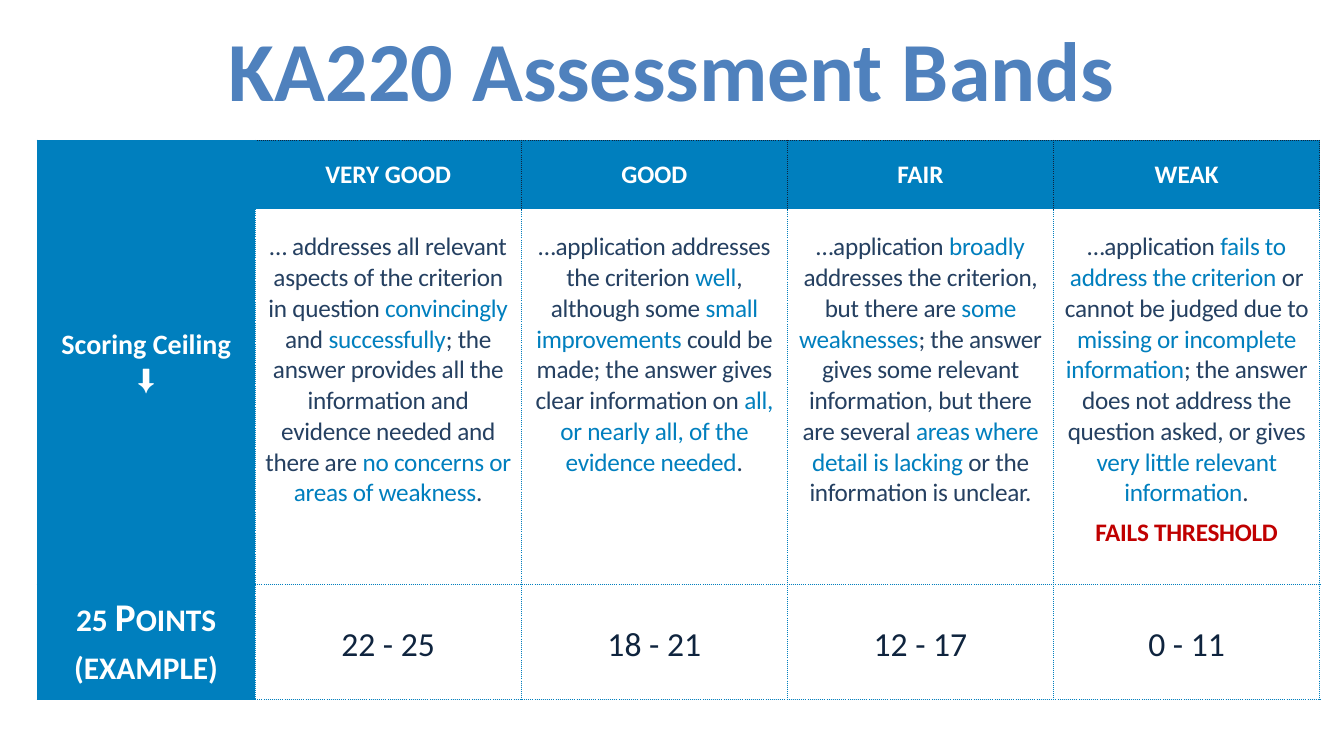
from dataclasses import dataclass

from lxml.etree import SubElement
from pptx import Presentation
from pptx.dml.color import RGBColor
from pptx.enum.text import MSO_ANCHOR, MSO_AUTO_SIZE, PP_ALIGN
from pptx.oxml.ns import qn
from pptx.table import _Cell
from pptx.text.text import _Paragraph
from pptx.util import Inches, Pt

COLORS = {
    "title": "4F81BD",
    "blue": "007FBE",
    "body": "254061",
    "navy": "0F243E",
    "alert": "C00000",
    "white": "FFFFFF",
}
FONT = "Calibri"
LABEL_COLUMN, BAND_COLUMN = 2.16, 2.64
ROWS = (0.68, 3.73, 1.14)


@dataclass(frozen=True)
class Band:
    name: str
    description: str  # phrases between asterisks are highlighted
    points: str
    warning: str = ""


@dataclass(frozen=True)
class Border:
    color: str = "blue"
    width: float = 1


BANDS = (
    Band("VERY GOOD",
         "… addresses all relevant aspects of the criterion in question *convincingly* and "
         "*successfully*; the answer provides all the information and evidence needed and "
         "there are *no concerns or areas of weakness*.", "22 - 25"),
    Band("GOOD",
         "…application addresses the criterion *well*, although some *small improvements *"
         "could be made; the answer gives clear information on "
         "*all, or nearly all, of the evidence needed*.", "18 - 21"),
    Band("FAIR",
         "…application *broadly* addresses the criterion, but there are *some weaknesses*; "
         "the answer gives some relevant information, but there are several "
         "*areas where detail is lacking *or the information is unclear.", "12 - 17"),
    Band("WEAK",
         "…application *fails to address the criterion *or cannot be judged due to "
         "*missing or incomplete information*; the answer does not address the question "
         "asked, or gives *very little relevant information*.", "0 - 11", "FAILS THRESHOLD"),
)
DOTTED = Border()
FINE = Border("navy", 0.5)


def rgb(color: str) -> RGBColor:
    return RGBColor.from_string(COLORS[color])


def format_paragraph(paragraph: _Paragraph, size: float, color: str, bold: bool = False,
                     spacing: float = 0) -> None:
    paragraph.alignment = PP_ALIGN.CENTER
    font = paragraph.font
    font.name, font.size, font.bold = FONT, Pt(size), bold
    font.color.rgb = rgb(color)
    if spacing:
        paragraph.space_before = paragraph.space_after = Pt(spacing)


def style_cell(cell: _Cell, fill: str, left: Border = DOTTED, right: Border = DOTTED,
               top: Border = DOTTED, bottom: Border = DOTTED) -> None:
    properties = cell._tc.get_or_add_tcPr()
    for side, border in zip("LRTB", (left, right, top, bottom)):
        edge = SubElement(properties, qn(f"a:ln{side}"), w=str(Pt(border.width)))
        paint = SubElement(edge, qn("a:solidFill"))
        SubElement(paint, qn("a:srgbClr"), val=COLORS[border.color])
        SubElement(edge, qn("a:prstDash"), val="sysDot")
    cell.fill.solid()
    cell.fill.fore_color.rgb = rgb(fill)
    cell.vertical_anchor = MSO_ANCHOR.MIDDLE


def set_narrow_margins(cell: _Cell, top: float = 0) -> None:
    cell.margin_left = cell.margin_right = Inches(0.07)
    cell.margin_top, cell.margin_bottom = Inches(top), 0


def write_description(cell: _Cell, band: Band) -> None:
    set_narrow_margins(cell, top=0.23)
    cell.vertical_anchor = MSO_ANCHOR.TOP
    description = cell.text_frame.paragraphs[0]
    format_paragraph(description, 18, "body", spacing=3)
    for index, phrase in enumerate(band.description.split("*")):
        run = description.add_run()
        run.text = phrase
        if index % 2:
            run.font.color.rgb = rgb("blue")
    if band.warning:
        warning = cell.text_frame.add_paragraph()
        warning.text = band.warning
        format_paragraph(warning, 18, "alert", bold=True, spacing=3)
    for paragraph in cell.text_frame.paragraphs:
        for run in paragraph.runs:
            run.font._element.set("spc", "-20")


def write_labels(ceiling: _Cell, points: _Cell) -> None:
    ceiling.text = "Scoring Ceiling\n⬇"
    for paragraph in ceiling.text_frame.paragraphs:
        format_paragraph(paragraph, 20, "white", bold=True)
    points.text = "25 Points\v(example)"
    example = points.text_frame.paragraphs[0]
    format_paragraph(example, 28, "white", bold=True)
    for run in example.runs:
        run.font._element.set("cap", "small")


def main() -> None:
    deck = Presentation()
    deck.slide_width, deck.slide_height = Inches(13.33), Inches(7.5)
    slide = deck.slides.add_slide(deck.slide_layouts[5])

    title = slide.shapes.title
    title.left, title.top = 0, Inches(0.36)
    title.width, title.height = deck.slide_width, Inches(0.87)
    title.text = "KA220 Assessment Bands"
    title.text_frame.auto_size = MSO_AUTO_SIZE.NONE
    title.text_frame.vertical_anchor = MSO_ANCHOR.TOP
    heading = title.text_frame.paragraphs[0]
    format_paragraph(heading, 60, "title", bold=True)
    heading.line_spacing = 0.75

    columns = (LABEL_COLUMN, *[BAND_COLUMN] * len(BANDS))
    table = slide.shapes.add_table(
        len(ROWS), len(columns), Inches(0.37), Inches(1.39),
        Inches(sum(columns)), Inches(sum(ROWS))).table
    table.first_row = table.horz_banding = False
    for column, width in zip(table.columns, columns):
        column.width = Inches(width)
    for row, height in zip(table.rows, ROWS):
        row.height = Inches(height)

    for row in range(len(ROWS)):
        style_cell(table.cell(row, 0), "blue")
    table.cell(0, 0).merge(table.cell(1, 0))
    write_labels(table.cell(0, 0), table.cell(2, 0))

    for column, band in enumerate(BANDS, start=1):
        header, description, points = (table.cell(row, column) for row in range(len(ROWS)))
        style_cell(header, "blue", left=DOTTED if column == 1 else FINE, right=FINE, top=FINE)
        header.text = band.name
        format_paragraph(header.text_frame.paragraphs[0], 18, "white", bold=True)

        style_cell(description, "white")
        write_description(description, band)

        style_cell(points, "white")
        set_narrow_margins(points)
        points.text = band.points
        score = points.text_frame.paragraphs[0]
        format_paragraph(score, 24, "navy", spacing=3)
        score.line_spacing = 1.15

    deck.save("out.pptx")


if __name__ == "__main__":
    main()
